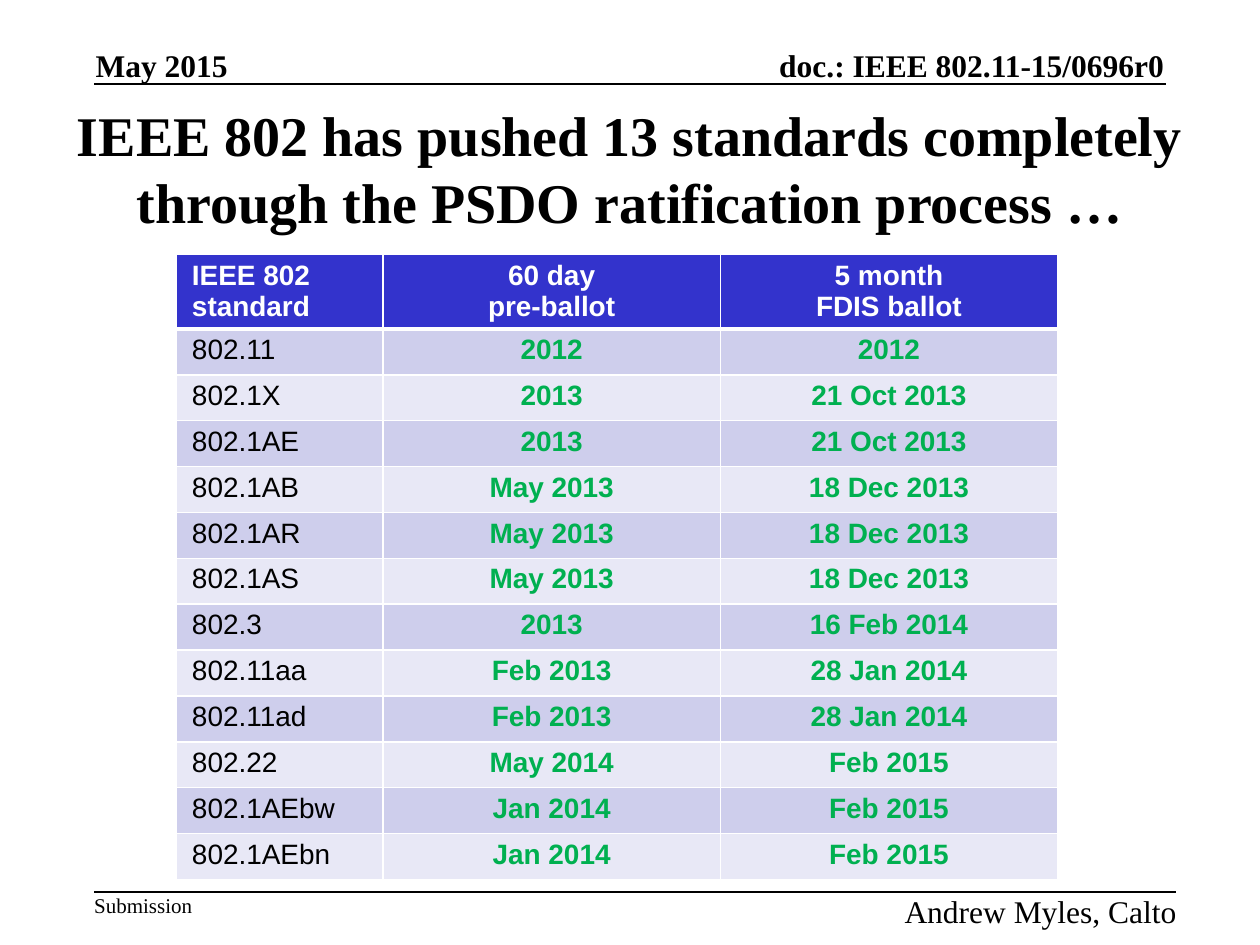
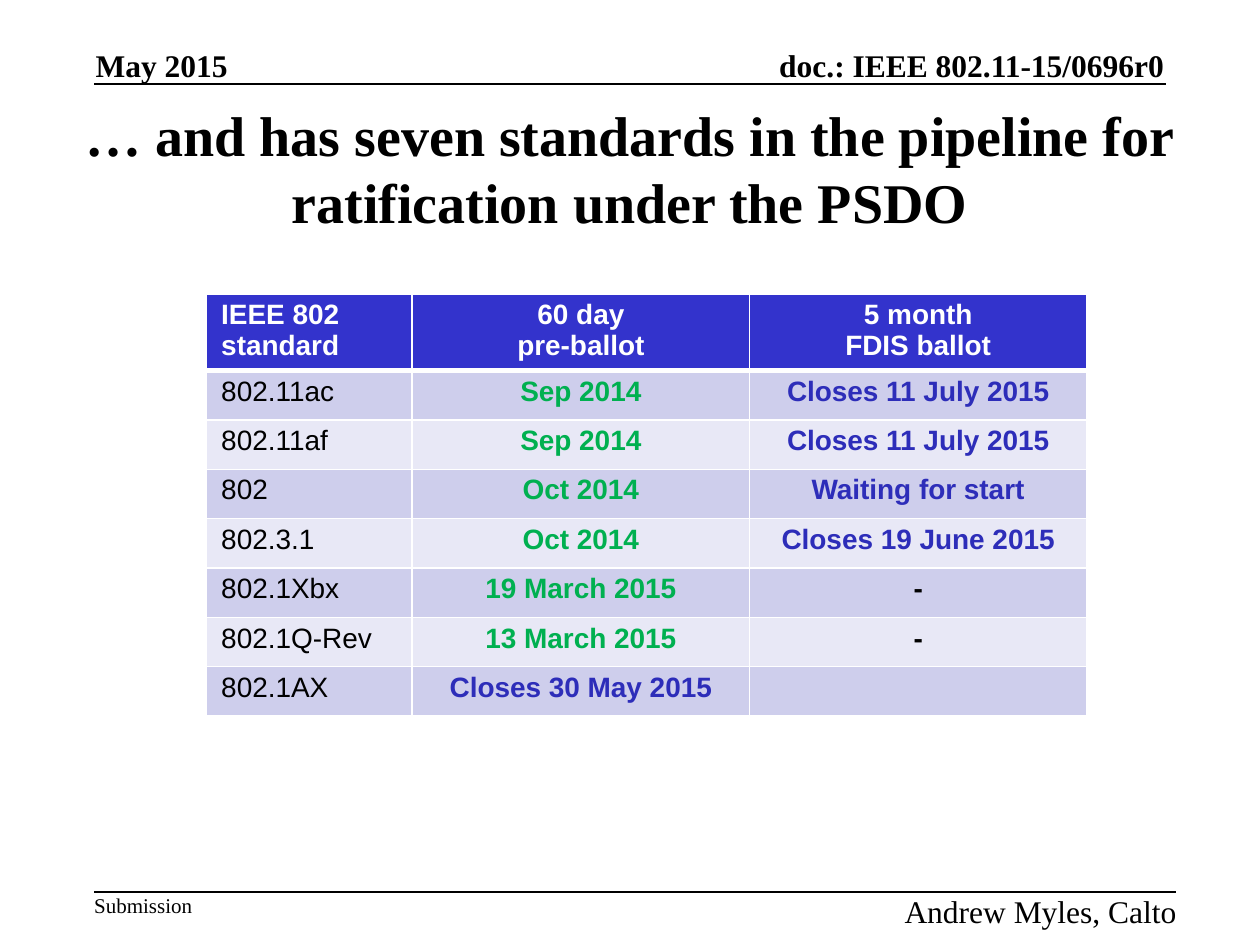
import copy

from lxml import etree
from pptx import Presentation
from pptx.dml.color import RGBColor
from pptx.enum.shapes import MSO_CONNECTOR
from pptx.enum.text import MSO_ANCHOR, PP_ALIGN
from pptx.oxml.ns import qn
from pptx.util import Cm, Pt

LEFT, CENTER, RIGHT = PP_ALIGN.LEFT, PP_ALIGN.CENTER, PP_ALIGN.RIGHT
TOP, MIDDLE, BOTTOM = MSO_ANCHOR.TOP, MSO_ANCHOR.MIDDLE, MSO_ANCHOR.BOTTOM
STRAIGHT = MSO_CONNECTOR.STRAIGHT

COLORS = {
    "text": "000000",
    "white": "FFFFFF",
    "header": "3333CC",
    "odd_row": "CECEEC",
    "even_row": "E8E8F6",
    "done": "00B050",
    "pending": "2D2DB9",
}
SERIF, SANS = "Times New Roman", "Arial"

COLUMN_WIDTHS = [4.16, 6.8, 6.8]
HEADINGS = ["IEEE 802\nstandard", "60 day\npre-ballot", "5 month\nFDIS ballot"]

RATIFIED = [
    ("802.11", "2012", "2012"),
    ("802.1X", "2013", "21 Oct 2013"),
    ("802.1AE", "2013", "21 Oct 2013"),
    ("802.1AB", "May 2013", "18 Dec 2013"),
    ("802.1AR", "May 2013", "18 Dec 2013"),
    ("802.1AS", "May 2013", "18 Dec 2013"),
    ("802.3", "2013", "16 Feb 2014"),
    ("802.11aa", "Feb 2013", "28 Jan 2014"),
    ("802.11ad", "Feb 2013", "28 Jan 2014"),
    ("802.22", "May 2014", "Feb 2015"),
    ("802.1AEbw", "Jan 2014", "Feb 2015"),
    ("802.1AEbn", "Jan 2014", "Feb 2015"),
]
PIPELINE = [
    ("802.11ac", "Sep 2014", "Closes 11 July 2015"),
    ("802.11af", "Sep 2014", "Closes 11 July 2015"),
    ("802", "Oct 2014", "Waiting for start"),
    ("802.3.1", "Oct 2014", "Closes 19 June 2015"),
    ("802.1Xbx", "19 March 2015", "-"),
    ("802.1Q-Rev", "13 March 2015", "-"),
    ("802.1AX", "Closes 30 May 2015", ""),
]


def rgb(name):
    return RGBColor.from_string(COLORS[name])


def write(tf, text, size=18, font=SERIF, color="text", bold=False, align=LEFT):
    """Fill the first paragraph; a newline becomes a line break."""
    p = tf.paragraphs[0]
    p.alignment = align
    for i, line in enumerate(text.split("\n")):
        if i:
            p.add_line_break()
        r = p.add_run()
        r.text = line
        r.font.size, r.font.name, r.font.bold = Pt(size), font, bold
        r.font.color.rgb = rgb(color)
    # Line breaks take the format of the text around them
    for br in p._p.findall(qn("a:br")):
        br.insert(0, copy.deepcopy(p.runs[0]._r.rPr))


def add_text(s, text, x, y, w, h, anchor=TOP, wrap=False, **fmt):
    tf = s.shapes.add_textbox(Cm(x), Cm(y), Cm(w), Cm(h)).text_frame
    tf.margin_left = tf.margin_right = tf.margin_top = tf.margin_bottom = 0
    tf.vertical_anchor = anchor
    tf.word_wrap = wrap
    write(tf, text, **fmt)


def add_rule(s, x1, x2, y):
    line = s.shapes.add_connector(STRAIGHT, Cm(x1), Cm(y), Cm(x2), Cm(y))
    line.line.color.rgb = rgb("text")
    line.line.width = Pt(1)
    etree.SubElement(line._element.spPr, qn("a:effectLst"))


def set_borders(cell, top=1, bottom=1):
    tcPr = cell._tc.get_or_add_tcPr()
    for side, width in (("L", 1), ("R", 1), ("T", top), ("B", bottom)):
        ln = etree.SubElement(tcPr, qn(f"a:ln{side}"), w=str(Pt(width)))
        fill = etree.SubElement(ln, qn("a:solidFill"))
        etree.SubElement(fill, qn("a:srgbClr"), val=COLORS["white"])


def cell_style(row, col, text):
    """Return the fill, text colour and weight of a cell."""
    if row == 0:
        return "header", "white", True
    fill = "odd_row" if row % 2 else "even_row"
    if col == 0 or text == "-":
        return fill, "text", col > 0
    pending = text.startswith(("Closes", "Waiting"))
    return fill, "pending" if pending else "done", True


def add_ballot_table(s, standards, x, y, header_h, body_h):
    rows = [HEADINGS, *standards]
    table = s.shapes.add_table(len(rows), len(HEADINGS), Cm(x), Cm(y),
                               Cm(sum(COLUMN_WIDTHS)), Cm(header_h + body_h)).table
    for column, width in zip(table.columns, COLUMN_WIDTHS):
        column.width = Cm(width)
    for i, row in enumerate(rows):
        table.rows[i].height = Cm(body_h / len(standards) if i else header_h)
        for j, text in enumerate(row):
            cell = table.cell(i, j)
            fill, color, bold = cell_style(i, j, text)
            cell.margin_left = cell.margin_right = Cm(0.31)
            # Borders add to the row height, so the margins leave room for them
            cell.margin_top = Cm(0.11)
            cell.margin_bottom = Cm(0.1 if i else 0.02)
            set_borders(cell, top=3 if i == 1 else 1, bottom=1 if i else 3)
            cell.fill.solid()
            cell.fill.fore_color.rgb = rgb(fill)
            write(cell.text_frame, text, size=16, font=SANS, color=color,
                  bold=bold, align=CENTER if j else LEFT)


def add_page(prs, title):
    s = prs.slides.add_slide(prs.slide_layouts[6])
    # Header
    add_text(s, "May 2015", 1.93, 0.95, 2.7, 0.75, anchor=BOTTOM, bold=True)
    add_text(s, "doc.: IEEE 802.11-15/0696r0", 14.35, 0.95, 9.12, 0.75,
             anchor=BOTTOM, bold=True, align=RIGHT)
    add_rule(s, 1.9, 23.5, 1.7)
    # Title
    add_text(s, title, 0.25, 1.9, 24.9, 2.97, anchor=MIDDLE, wrap=True,
             size=32, bold=True, align=CENTER)
    # Footer
    add_rule(s, 1.9, 23.7, 17.98)
    add_text(s, "Submission", 1.9, 18, 1.98, 0.5, size=12)
    add_text(s, "Andrew Myles, Calto", 16.72, 17.98, 7, 0.75, align=RIGHT)
    return s


def main():
    prs = Presentation()
    prs.slide_width, prs.slide_height = Cm(25.4), Cm(19.05)

    # Ratified standards
    s = add_page(prs, "IEEE 802 has pushed 13 standards completely "
                      "through the PSDO ratification process …")
    add_ballot_table(s, RATIFIED, 3.56, 5.13, 1.5, 11.1)

    # Standards in the pipeline
    s = add_page(prs, "… and has seven standards in the pipeline for "
                      "ratification under the PSDO")
    add_ballot_table(s, PIPELINE, 4.15, 5.93, 1.54, 6.97)

    prs.save("out.pptx")


if __name__ == "__main__":
    main()
